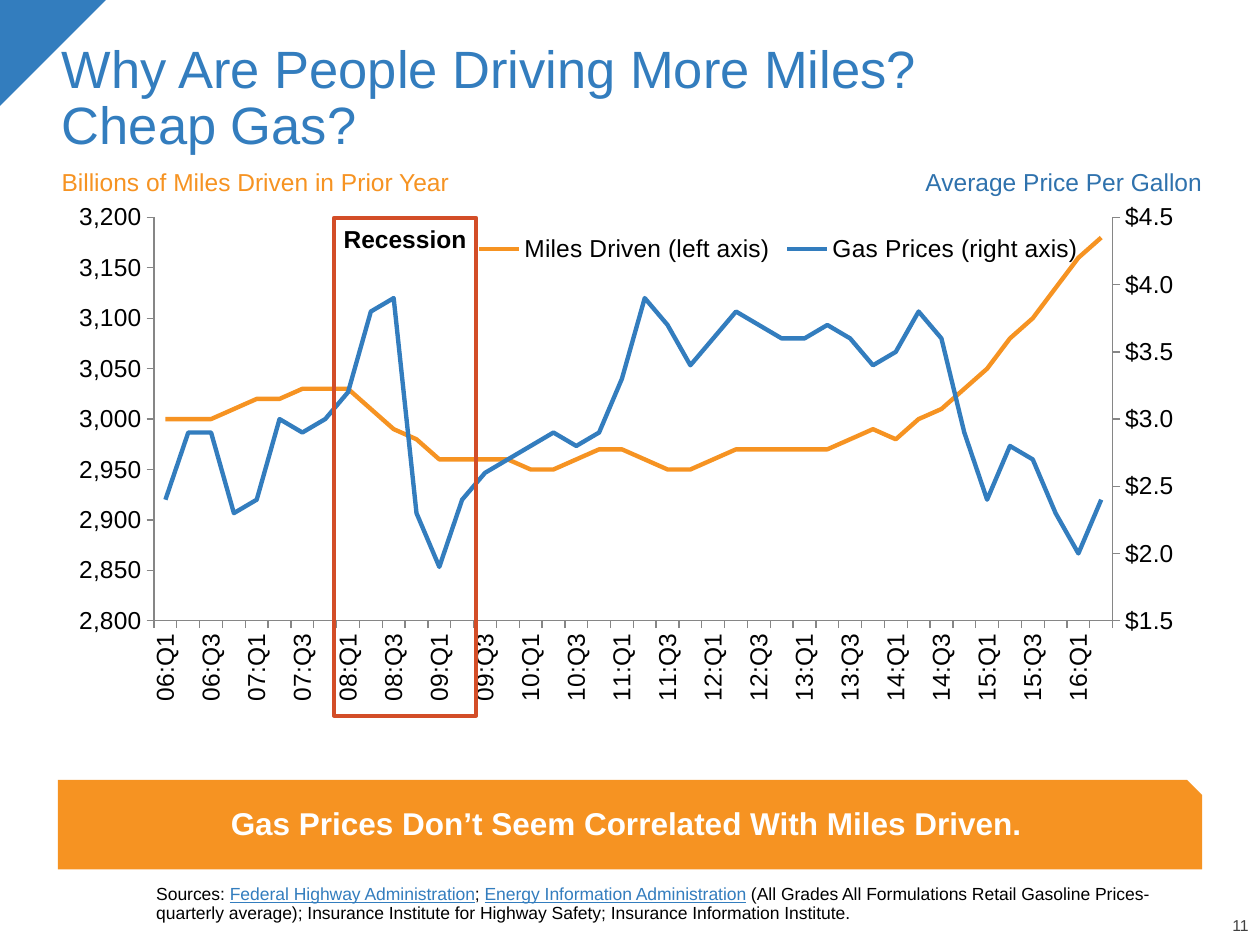
from copy import deepcopy
from dataclasses import dataclass

from lxml import etree
from pptx import Presentation
from pptx import util as u
from pptx.chart.axis import ValueAxis
from pptx.chart.data import CategoryChartData
from pptx.dml.color import RGBColor
from pptx.enum import chart as ch
from pptx.enum import shapes, text
from pptx.oxml.ns import qn

BLUE = RGBColor(0x33, 0x7D, 0xBE)
DARK_BLUE = RGBColor(0x2F, 0x72, 0xAD)
ORANGE = RGBColor(0xF6, 0x93, 0x22)
RED = RGBColor(0xD3, 0x4D, 0x27)
GRAY = RGBColor(0x86, 0x86, 0x86)
DARK_GRAY = RGBColor(0x40, 0x40, 0x40)
BLACK = RGBColor(0, 0, 0)
WHITE = RGBColor(0xFF, 0xFF, 0xFF)

LEFT, CENTER, RIGHT = text.PP_ALIGN.LEFT, text.PP_ALIGN.CENTER, text.PP_ALIGN.RIGHT
TOP, MIDDLE, BOTTOM = text.MSO_ANCHOR.TOP, text.MSO_ANCHOR.MIDDLE, text.MSO_ANCHOR.BOTTOM
NO_INSETS = (0, 0, 0, 0)
INSETS = (0.1, 0.05, 0.1, 0.05)

QUARTERS = [f"{year:02}:Q{quarter}" for year in range(6, 17) for quarter in range(1, 5)][:42]
MILES = [
    3000, 3000, 3000, 3010, 3020, 3020, 3030, 3030, 3030, 3010, 2990, 2980, 2960, 2960,
    2960, 2960, 2950, 2950, 2960, 2970, 2970, 2960, 2950, 2950, 2960, 2970, 2970, 2970,
    2970, 2970, 2980, 2990, 2980, 3000, 3010, 3030, 3050, 3080, 3100, 3130, 3160, 3180,
]
GAS_PRICES = [
    2.4, 2.9, 2.9, 2.3, 2.4, 3, 2.9, 3, 3.2, 3.8, 3.9, 2.3, 1.9, 2.4,
    2.6, 2.7, 2.8, 2.9, 2.8, 2.9, 3.3, 3.9, 3.7, 3.4, 3.6, 3.8, 3.7, 3.6,
    3.6, 3.7, 3.6, 3.4, 3.5, 3.8, 3.6, 2.9, 2.4, 2.8, 2.7, 2.3, 2, 2.4,
]


@dataclass
class Span:
    words: str
    color: RGBColor
    underline: bool = False


@dataclass
class Label:
    at: tuple
    spans: list
    size: int
    align: text.PP_ALIGN = LEFT
    anchor: text.MSO_ANCHOR = TOP
    insets: tuple = INSETS


def inches(values) -> list:
    return [u.Inches(value) for value in values]


def set_values(target, values: dict) -> None:
    for name, value in values.items():
        setattr(target, name, value)


def write(shape, spans, size, align=LEFT, anchor=TOP, insets=INSETS,
          bold=False, wrap=True, spacing=0.9) -> None:
    left, top, right, bottom = inches(insets)
    frame = shape.text_frame
    set_values(frame, {
        "word_wrap": wrap, "auto_size": text.MSO_AUTO_SIZE.NONE, "vertical_anchor": anchor,
        "margin_left": left, "margin_top": top, "margin_right": right, "margin_bottom": bottom,
    })
    para = frame.paragraphs[0]
    set_values(para, {"alignment": align, "line_spacing": spacing, "space_before": u.Pt(0)})
    for span in spans:
        for number, line in enumerate(span.words.splitlines()):
            if number:
                para.add_line_break()
            run = para.add_run()
            run.text = line
            set_values(run.font, {"name": "Arial", "size": u.Pt(size), "bold": bold,
                                  "underline": span.underline})
            run.font.color.rgb = span.color


def add_label(page, label: Label) -> None:
    box = page.shapes.add_textbox(*inches(label.at))
    write(box, label.spans, label.size, label.align, label.anchor, label.insets)


def add_block(page, kind, at, fill=None, line=None):
    block = page.shapes.add_shape(kind, *inches(at))
    block.shadow.inherit = False
    if fill is None:
        block.fill.background()
    else:
        block.fill.solid()
        block.fill.fore_color.rgb = fill
    if line is None:
        block.line.fill.background()
    else:
        block.line.color.rgb = line
        block.line.width = u.Pt(2.25)
    return block


def make_layout(**sizes):
    """Build a manual chart layout from edge modes and fractions."""
    layout = etree.Element(qn("c:layout"))
    manual = etree.SubElement(layout, qn("c:manualLayout"))
    for name, value in sizes.items():
        etree.SubElement(manual, qn(f"c:{name}"), val=str(value))
    return layout


def move_to_right_axis(chart) -> ValueAxis:
    """Put the last series on a second value axis at the right."""
    plot_area = chart.plots[0]._element.getparent()
    left_plot = plot_area.find(qn("c:lineChart"))
    right_plot = deepcopy(left_plot)
    left_plot.remove(left_plot.findall(qn("c:ser"))[1])
    right_plot.remove(right_plot.findall(qn("c:ser"))[0])
    left_plot.addnext(right_plot)

    value_axis = deepcopy(plot_area.find(qn("c:valAx")))
    category_axis = deepcopy(plot_area.find(qn("c:catAx")))
    plot_area.find(qn("c:valAx")).addnext(value_axis)
    value_axis.addnext(category_axis)
    category_id, value_id = "5001", "5002"
    for axis, own, other in ((category_axis, category_id, value_id),
                             (value_axis, value_id, category_id)):
        axis.find(qn("c:axId")).set("val", own)
        axis.find(qn("c:crossAx")).set("val", other)
    for axis_id, value in zip(right_plot.findall(qn("c:axId")), (category_id, value_id)):
        axis_id.set("val", value)
    category_axis.find(qn("c:delete")).set("val", "1")
    value_axis.find(qn("c:axPos")).set("val", "r")
    value_axis.find(qn("c:crosses")).set("val", "max")
    return ValueAxis(value_axis)


def scale_axis(axis, low, high, step, number_format) -> None:
    set_values(axis, {"minimum_scale": low, "maximum_scale": high, "major_unit": step})
    set_values(axis.tick_labels, {"number_format": number_format,
                                  "number_format_is_linked": False})


def add_miles_and_gas_chart(page) -> None:
    data = CategoryChartData()
    data.categories = QUARTERS
    data.add_series("Miles Driven (left axis)", MILES)
    data.add_series("Gas Prices (right axis)", GAS_PRICES)
    chart = page.shapes.add_chart(ch.XL_CHART_TYPE.LINE, *inches((0.46, 1.52, 9.08, 4.58)),
                                  data).chart
    set_values(chart, {"has_title": False, "has_legend": True})
    set_values(chart.font, {"name": "Arial", "size": u.Pt(14)})
    chart.font.color.rgb = BLACK
    chart.plots[0].vary_by_categories = False
    for series, color in zip(chart.plots[0].series, (ORANGE, BLUE)):
        series.smooth = False
        series.marker.style = ch.XL_MARKER_STYLE.NONE
        series.format.line.color.rgb = color
        series.format.line.width = u.Pt(2.5)

    for axis in (chart.category_axis, chart.value_axis):
        set_values(axis, {"has_major_gridlines": False,
                          "major_tick_mark": ch.XL_TICK_MARK.OUTSIDE,
                          "minor_tick_mark": ch.XL_TICK_MARK.NONE})
        axis.format.line.color.rgb = GRAY
        axis.format.line.width = u.Pt(0.75)
    categories = chart.category_axis
    categories.tick_labels.font.size = u.Pt(14)
    categories._element.find(qn("c:txPr")).find(qn("a:bodyPr")).set("rot", "-5400000")
    skip = etree.Element(qn("c:tickLblSkip"), val="2")
    categories._element.find(qn("c:noMultiLvlLbl")).addprevious(skip)
    scale_axis(chart.value_axis, 2800, 3200, 50, "#,##0")
    scale_axis(move_to_right_axis(chart), 1.5, 4.5, 0.5, '"$"#,##0.0')

    plot_area = chart.plots[0]._element.getparent()
    for old in plot_area.findall(qn("c:layout")):
        plot_area.remove(old)
    plot_area.insert(0, make_layout(layoutTarget="inner", xMode="edge", yMode="edge",
                                    x=0.084, y=0.045, w=0.838, h=0.699))
    set_values(chart.legend, {"position": ch.XL_LEGEND_POSITION.BOTTOM,
                              "include_in_layout": False})
    legend = chart.legend._element
    for old in legend.findall(qn("c:layout")):
        legend.remove(old)
    legend.find(qn("c:legendPos")).addnext(
        make_layout(xMode="edge", yMode="edge", x=0.36, y=0.06, w=0.54, h=0.08))


LABELS = [
    Label((9.43, 7.29, 0.48, 0.13), [Span("11", DARK_GRAY)], 9, RIGHT, BOTTOM, NO_INSETS),
    Label((0.39, 1.3, 3.81, 0.43), [Span("Billions of Miles Driven in Prior Year", ORANGE)], 14),
    Label((5.02, 1.3, 4.62, 0.43), [Span("Average Price Per Gallon", DARK_BLUE)], 14, RIGHT),
    Label((1.24, 6.88, 8.4, 0.45), [
        Span("Sources: ", BLACK),
        Span("Federal Highway Administration", BLUE, True),
        Span("; ", BLACK),
        Span("Energy Information Administration", BLUE, True),
        Span(" (All Grades All Formulations Retail Gasoline Prices-quarterly average); "
             "Insurance Institute for Highway Safety; Insurance Information Institute.", BLACK),
    ], 10, anchor=BOTTOM, insets=NO_INSETS),
]


def main() -> None:
    deck = Presentation()
    deck.slide_width, deck.slide_height = inches((10, 7.5))
    page = deck.slides.add_slide(deck.slide_layouts.get_by_name("Title Only"))

    corner = add_block(page, shapes.MSO_SHAPE.RIGHT_TRIANGLE, (0, 0, 0.84, 0.84), BLUE)
    corner.rotation = 90
    title = page.shapes.title
    title.left, title.top, title.width, title.height = inches((0.39, 0.25, 9.25, 1.04))
    write(title, [Span("Why Are People Driving More Miles?\nCheap Gas?", BLUE)], 30,
          anchor=BOTTOM)
    add_miles_and_gas_chart(page)
    for label in LABELS:
        add_label(page, label)
    banner = add_block(page, shapes.MSO_SHAPE.SNIP_1_RECTANGLE, (0.46, 6.19, 9.08, 0.71), ORANGE)
    write(banner, [Span("Gas Prices Don’t Seem Correlated With Miles Driven.", WHITE)], 18,
          CENTER, MIDDLE, (0.1, 0.05, 0.1, 0.1), bold=True)
    recession = add_block(page, shapes.MSO_SHAPE.RECTANGLE, (2.65, 1.73, 1.13, 3.95), line=RED)
    write(recession, [Span("Recession", BLACK)], 14, CENTER, bold=True, wrap=False, spacing=1.0)
    deck.save("out.pptx")


if __name__ == "__main__":
    main()
